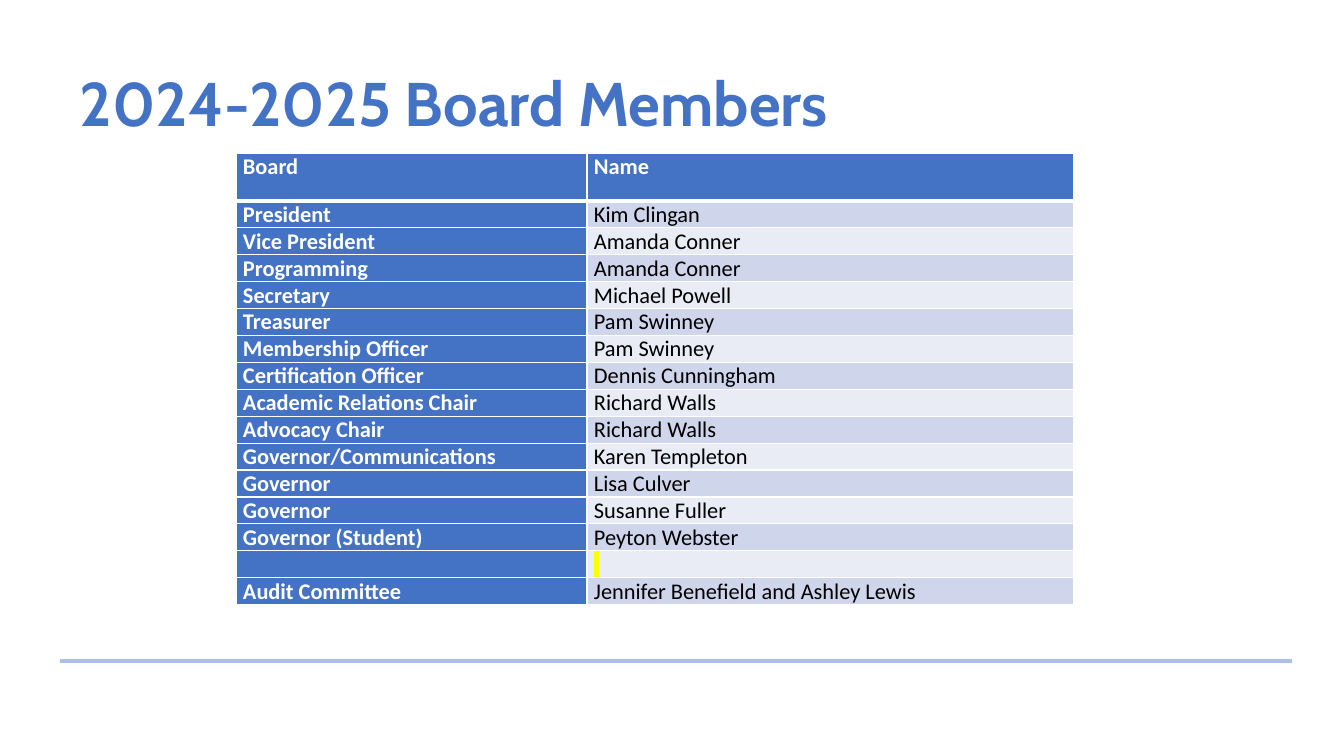
from lxml.etree import SubElement
from pptx import Presentation
from pptx.dml.color import RGBColor
from pptx.enum.shapes import MSO_CONNECTOR
from pptx.enum.text import MSO_ANCHOR
from pptx.oxml.ns import qn
from pptx.util import Emu, Pt

BLUE, WHITE, BLACK, YELLOW = "4472C4", "FFFFFF", "000000", "FFFF00"
BANDS = ("CFD5EA", "E9EBF5")
RULE = "ABC0E4"

HEADINGS = ("Board", "Name")
MEMBERS = [
    ("President", "Kim Clingan"),
    ("Vice President", "Amanda Conner"),
    ("Programming", "Amanda Conner"),
    ("Secretary", "Michael Powell"),
    ("Treasurer", "Pam Swinney"),
    ("Membership Officer", "Pam Swinney"),
    ("Certification Officer", "Dennis Cunningham"),
    ("Academic Relations Chair", "Richard Walls"),
    ("Advocacy Chair", "Richard Walls"),
    ("Governor/Communications", "Karen Templeton"),
    ("Governor", "Lisa Culver"),
    ("Governor", "Susanne Fuller"),
    ("Governor (Student)", "Peyton Webster"),
    ("", " "),
    ("Audit Committee", "Jennifer Benefield and Ashley Lewis"),
]


def px(n):
    return Emu(round(n * 914400 / 100.8))


def rgb(color):
    return RGBColor.from_string(color)


def write(tf, text, size=16, font="Calibri", color=BLACK, bold=False,
          spacing=None, highlight=None):
    """Fill the first paragraph; an empty text still keeps its line size."""
    p = tf.paragraphs[0]
    if spacing:
        p.line_spacing = spacing
    if not text:
        SubElement(p._p, qn("a:endParaRPr"), sz=str(size * 100))
        return
    r = p.add_run()
    r.text = text
    r.font.size, r.font.name, r.font.bold = Pt(size), font, bold
    r.font.color.rgb = rgb(color)
    if highlight:
        rPr = r._r.get_or_add_rPr()
        mark = SubElement(rPr, qn("a:highlight"))
        SubElement(mark, qn("a:srgbClr"), val=highlight)
        rPr.find(qn("a:latin")).addprevious(mark)


def set_border(cell, side, width):
    ln = SubElement(cell._tc.get_or_add_tcPr(), qn(f"a:ln{side}"), w=str(Pt(width)))
    fill = SubElement(ln, qn("a:solidFill"))
    SubElement(fill, qn("a:srgbClr"), val=WHITE)


class Deck:
    def __init__(self, width, height):
        self.prs = Presentation()
        self.prs.slide_width, self.prs.slide_height = px(width), px(height)
        self.s = self.prs.slides.add_slide(self.prs.slide_layouts[6])

    def line(self, x1, y1, x2, y2, color, width):
        sp = self.s.shapes.add_connector(
            MSO_CONNECTOR.STRAIGHT, px(x1), px(y1), px(x2), px(y2))
        sp.line.color.rgb = rgb(color)
        sp.line.width = Pt(width)
        SubElement(sp._element.spPr, qn("a:effectLst"))

    def text(self, x, y, w, h, text, **style):
        tf = self.s.shapes.add_textbox(px(x), px(y), px(w), px(h)).text_frame
        tf.word_wrap = True
        tf.vertical_anchor = MSO_ANCHOR.MIDDLE
        write(tf, text, **style)

    def table(self, x, y, widths, heights, rows):
        table = self.s.shapes.add_table(
            len(rows), len(widths), px(x), px(y), px(sum(widths)), px(sum(heights))).table
        table.horz_banding = False
        for column, width in zip(table.columns, widths):
            column.width = px(width)
        for row, height in zip(table.rows, heights):
            row.height = px(height)
        for i, row in enumerate(rows):
            for j, text in enumerate(row):
                self.cell(table.cell(i, j), i, j, text)

    def cell(self, cell, i, j, text):
        """Header row and first column are blue; the other cells are banded."""
        heading = i == 0 or j == 0
        cell.margin_left = cell.margin_right = px(7)
        cell.margin_top = cell.margin_bottom = 0
        widths = {"L": 1, "R": 1, "T": 3 if i == 1 else 1, "B": 3 if i == 0 else 1}
        for side, width in widths.items():
            set_border(cell, side, width)
        cell.fill.solid()
        cell.fill.fore_color.rgb = rgb(BLUE if heading else BANDS[(i - 1) % 2])
        write(cell.text_frame, text, color=WHITE if heading else BLACK, bold=heading,
              highlight=YELLOW if text == " " else None)


def main():
    deck = Deck(1344, 756)
    deck.line(60, 661, 1292, 661, RULE, 3.5)
    deck.text(70, 49, 871, 116, "2024-2025 Board Members", size=44, font="Cabin",
              color=BLUE, bold=True, spacing=0.9)
    deck.table(236, 153, (351, 487), [48] + [24] * len(MEMBERS), [HEADINGS] + MEMBERS)
    deck.prs.save("out.pptx")


if __name__ == "__main__":
    main()
